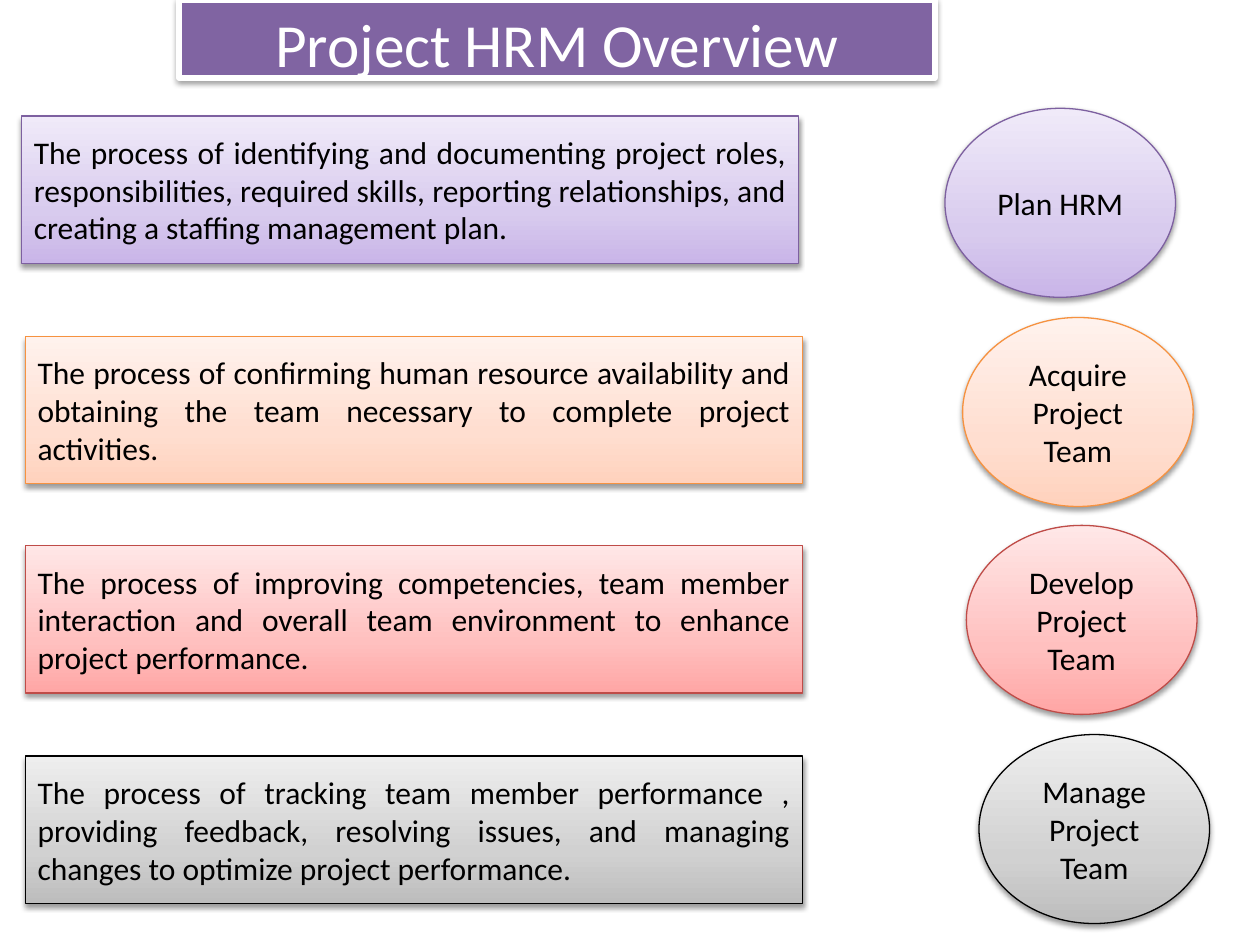
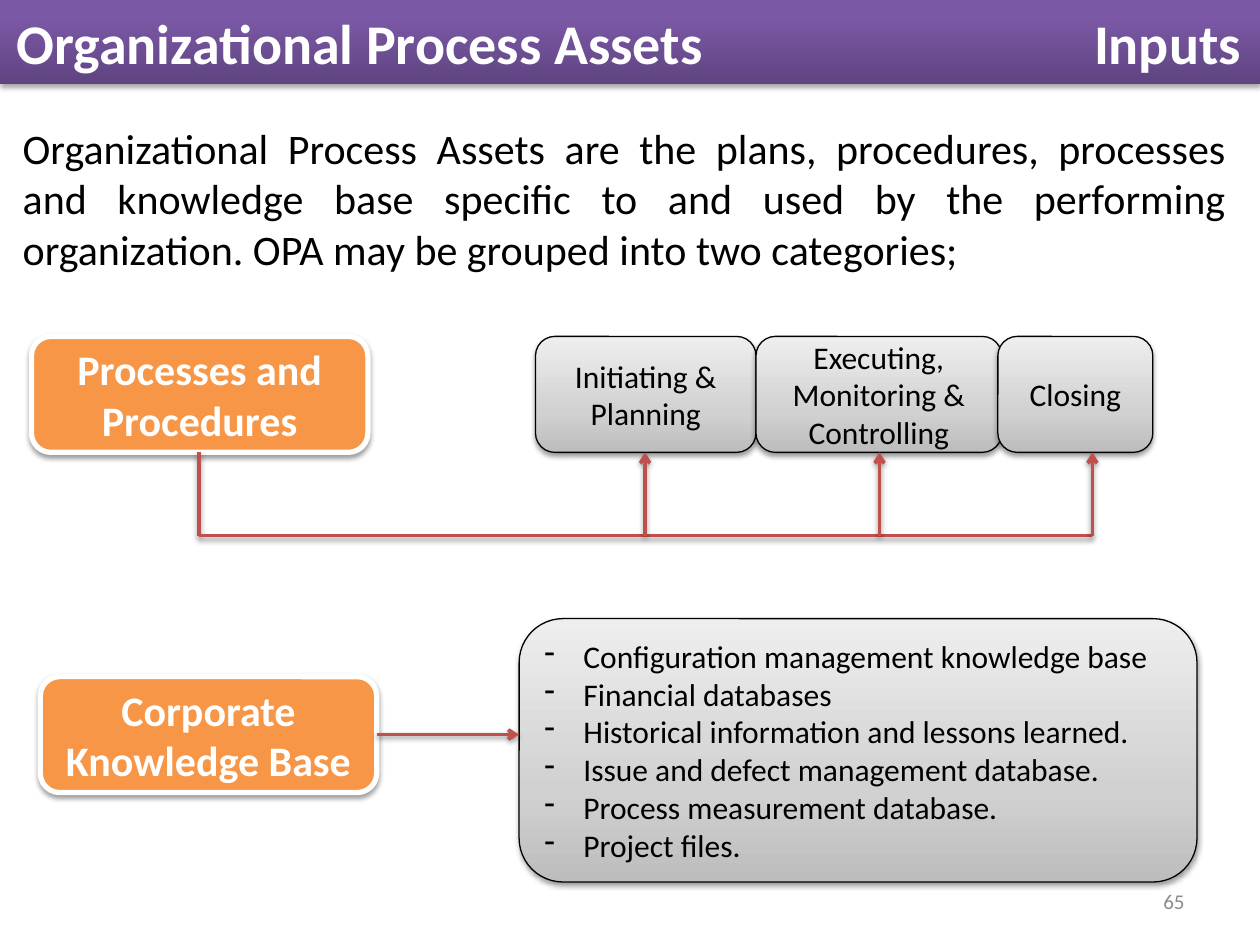
from dataclasses import dataclass
from typing import Any

from lxml.etree import SubElement
from pptx import Presentation
from pptx.dml.color import RGBColor
from pptx.enum.shapes import MSO_CONNECTOR, MSO_SHAPE
from pptx.enum.text import MSO_ANCHOR, MSO_AUTO_SIZE, PP_ALIGN
from pptx.oxml.ns import qn
from pptx.util import Inches, Pt

# Shared look
FONT = "Calibri"
BLACK, WHITE = "000000", "FFFFFF"
PURPLE, ORANGE, RED, PAGE_GREY = "8064A2", "F79646", "C0504D", "8C8C8C"


@dataclass(frozen=True)
class Theme:
    stops: tuple[tuple[int, str], ...]
    line: str = ""


@dataclass(frozen=True)
class Box:
    left: float
    top: float
    width: float
    height: float

    @property
    def bottom(self) -> float:
        return self.top + self.height

    @property
    def middle(self) -> float:
        return self.top + self.height / 2


@dataclass(frozen=True)
class Process:
    name: str
    description: str
    theme: Theme
    box_left: float
    box_top: float
    circle_left: float
    circle_top: float


@dataclass(frozen=True)
class Phase:
    name: str
    left: float
    width: float
    arrow_x: float


LILAC = Theme(((0, "C9B5E8"), (35, "D8CBEE"), (100, "F0EAF9")), "7D60A0")
PEACH = Theme(((0, "FFD2BD"), (35, "FFDED0"), (100, "FFF2ED")), "F69240")
PINK = Theme(((0, "FFA6A5"), (35, "FFC0BF"), (100, "FFE7E7")), "BF4C48")
GREY = Theme(((0, "BDBDBD"), (35, "D1D1D1"), (100, "EEEEEE")), BLACK)
BANNER = Theme(((0, "5F4480"), (80, "7B58A6"), (100, "7C57A8")))

PROCESSES = [
    Process("Plan HRM",
            "The process of identifying and documenting project roles, responsibilities, "
            "required skills, reporting relationships, and creating a staffing management plan.",
            LILAC, 0.17, 0.92, 7.5, 0.86),
    Process("Acquire Project Team",
            "The process of confirming human resource availability and obtaining the team "
            "necessary to complete project activities.",
            PEACH, 0.2, 2.67, 7.64, 2.52),
    Process("Develop Project Team",
            "The process of improving competencies, team member interaction and overall team "
            "environment to enhance project performance.",
            PINK, 0.2, 4.33, 7.67, 4.17),
    Process("Manage Project Team",
            "The process of tracking team member performance , providing feedback, resolving "
            "issues, and managing changes to optimize project performance.",
            GREY, 0.2, 6, 7.77, 5.83),
]

PHASES = [
    Phase("Initiating & Planning", 4.25, 1.75, 5.12),
    Phase("Executing, Monitoring & Controlling", 6, 1.95, 6.98),
    Phase("Closing", 7.92, 1.23, 8.67),
]

KNOWLEDGE_ITEMS = [
    "Configuration management knowledge base",
    "Financial databases",
    "Historical information and lessons learned.",
    "Issue and defect management database.",
    "Process measurement database.",
    "Project files.",
]


def color(value: str) -> RGBColor:
    return RGBColor.from_string(value)


def apply_format(target: Any, values: dict[str, Any]) -> None:
    for name, value in values.items():
        setattr(target, name, value)


def place(shape: Any, box: Box) -> None:
    apply_format(shape, {name: Inches(getattr(box, name))
                         for name in ("left", "top", "width", "height")})


def add_shadow(shape: Any, alpha: int = 38, distance: float = 1.6) -> None:
    properties = shape._element.spPr
    effects = SubElement(properties, qn("a:effectLst"))
    shadow = SubElement(effects, qn("a:outerShdw"), blurRad=str(Pt(3.1)),
                        dist=str(Pt(distance)), dir="5400000", rotWithShape="0")
    tint = SubElement(shadow, qn("a:srgbClr"), val=BLACK)
    SubElement(tint, qn("a:alpha"), val=str(alpha * 1000))


def paint(shape: Any, fill: str | Theme) -> None:
    """Solid fills get a thick white edge, gradients a thin edge of their theme."""
    if isinstance(fill, str):
        shape.fill.solid()
        shape.fill.fore_color.rgb = color(fill)
        edge, width = WHITE, 3
    else:
        shape.fill.gradient()
        shape.fill.gradient_angle = 90
        stops = shape._element.spPr.find(qn("a:gradFill")).find(qn("a:gsLst"))
        for old in list(stops):
            stops.remove(old)
        for position, value in fill.stops:
            stop = SubElement(stops, qn("a:gs"), pos=str(position * 1000))
            SubElement(stop, qn("a:srgbClr"), val=value)
        edge, width = fill.line, 0.75
    if edge:
        shape.line.color.rgb = color(edge)
        shape.line.width = Pt(width)
    else:
        shape.line.fill.background()


def write(shape: Any, lines: list[str], size: float = 18, ink: str = BLACK,
          bold: bool = False, align: PP_ALIGN = PP_ALIGN.CENTER,
          anchor: MSO_ANCHOR = MSO_ANCHOR.MIDDLE) -> None:
    frame = shape.text_frame
    apply_format(frame, {"word_wrap": True, "auto_size": MSO_AUTO_SIZE.NONE,
                         "vertical_anchor": anchor})
    for index, line in enumerate(lines):
        paragraph = frame.paragraphs[0] if index == 0 else frame.add_paragraph()
        paragraph.alignment = align
        run = paragraph.add_run()
        run.text = line
        apply_format(run.font, {"name": FONT, "size": Pt(size), "bold": bold})
        run.font.color.rgb = color(ink)


def add_block(slide: Any, kind: MSO_SHAPE, box: Box, fill: str | Theme,
              lines: list[str], **text_format: Any) -> Any:
    shape = slide.shapes.add_shape(kind, 0, 0, 0, 0)
    place(shape, box)
    paint(shape, fill)
    add_shadow(shape)
    write(shape, lines, **text_format)
    return shape


def add_line(slide: Any, start: tuple[float, float], end: tuple[float, float],
             arrow: bool = False) -> None:
    connector = slide.shapes.add_connector(
        MSO_CONNECTOR.STRAIGHT, *(Inches(value) for value in start + end))
    connector.line.color.rgb = color(RED)
    connector.line.width = Pt(2)
    if arrow:
        SubElement(connector._element.spPr.find(qn("a:ln")), qn("a:tailEnd"), type="arrow")
    add_shadow(connector)


def set_bullet(paragraph: Any, character: str = "", indent: float = 0) -> None:
    properties = paragraph._p.get_or_add_pPr()
    properties.set("marL", str(Inches(indent)))
    properties.set("indent", str(-Inches(indent)))
    if character:
        SubElement(properties, qn("a:buChar"), char=character)
    else:
        SubElement(properties, qn("a:buNone"))


def build_overview(presentation: Any) -> None:
    slide = presentation.slides.add_slide(presentation.slide_layouts[5])

    # Title
    title = slide.shapes.title
    place(title, Box(1.42, 0, 6, 0.62))
    paint(title, PURPLE)
    add_shadow(title)
    write(title, ["Project HRM Overview"], size=35, ink=WHITE, anchor=MSO_ANCHOR.TOP)

    # Descriptions with their process names
    for process in PROCESSES:
        add_block(slide, MSO_SHAPE.RECTANGLE,
                  Box(process.box_left, process.box_top, 6.17, 1.17),
                  process.theme, [process.description], align=PP_ALIGN.JUSTIFY)
        add_block(slide, MSO_SHAPE.OVAL,
                  Box(process.circle_left, process.circle_top, 1.83, 1.5),
                  process.theme, [process.name])


def build_assets(presentation: Any) -> None:
    slide = presentation.slides.add_slide(presentation.slide_layouts[1])
    rounded = MSO_SHAPE.ROUNDED_RECTANGLE

    # Title band, with the section name on a right tab
    title = slide.shapes.title
    place(title, Box(0, 0, 10, 0.67))
    paint(title, BANNER)
    add_shadow(title, alpha=35, distance=1.8)
    write(title, ["Organizational Process Assets\tInputs"], size=32, ink=WHITE,
          bold=True, align=PP_ALIGN.LEFT)
    title.text_frame.margin_left = Inches(0.13)
    tabs = SubElement(title.text_frame.paragraphs[0]._p.get_or_add_pPr(), qn("a:tabLst"))
    SubElement(tabs, qn("a:tab"), pos=str(Inches(9.72)), algn="r")

    # Introduction
    body = slide.placeholders[1]
    place(body, Box(0.08, 0.92, 9.75, 6.5))
    write(body, ["Organizational Process Assets are the plans, procedures, processes and "
                 "knowledge base specific to and used by the performing organization. "
                 "OPA may be grouped into two categories;"],
          size=24, align=PP_ALIGN.JUSTIFY, anchor=MSO_ANCHOR.TOP)
    set_bullet(body.text_frame.paragraphs[0])

    # Two categories
    procedures = Box(0.25, 2.67, 2.67, 0.92)
    knowledge = Box(0.32, 5.37, 2.67, 0.92)
    for box, name in ((procedures, "Processes and Procedures"),
                      (knowledge, "Corporate Knowledge Base")):
        add_block(slide, rounded, box, ORANGE, [name], size=24, ink=WHITE, bold=True)

    # Phases, fed from one rail below them
    rail_y, trunk_x = 4.25, 1.58
    for phase in PHASES:
        add_block(slide, rounded, Box(phase.left, procedures.top, phase.width, 0.92),
                  GREY, [phase.name])
    add_line(slide, (trunk_x, procedures.bottom), (trunk_x, rail_y))
    add_line(slide, (trunk_x, rail_y), (PHASES[-1].arrow_x, rail_y))
    for phase in PHASES:
        add_line(slide, (phase.arrow_x, rail_y), (phase.arrow_x, procedures.bottom), arrow=True)

    # Knowledge base contents
    contents = add_block(slide, rounded, Box(4.12, 4.91, 5.38, 2.09), GREY,
                         KNOWLEDGE_ITEMS, align=PP_ALIGN.LEFT)
    for paragraph in contents.text_frame.paragraphs:
        set_bullet(paragraph, "-", 0.31)
    add_line(slide, (2.99, knowledge.middle), (4.12, knowledge.middle), arrow=True)

    # Page number
    number = slide.shapes.add_textbox(0, 0, 0, 0)
    place(number, Box(7.17, 6.95, 2.33, 0.4))
    write(number, ["65"], size=12, ink=PAGE_GREY, align=PP_ALIGN.RIGHT)


def main() -> None:
    presentation = Presentation()
    presentation.slide_width, presentation.slide_height = Inches(10), Inches(7.5)
    build_overview(presentation)
    build_assets(presentation)
    presentation.save("out.pptx")


if __name__ == "__main__":
    main()
